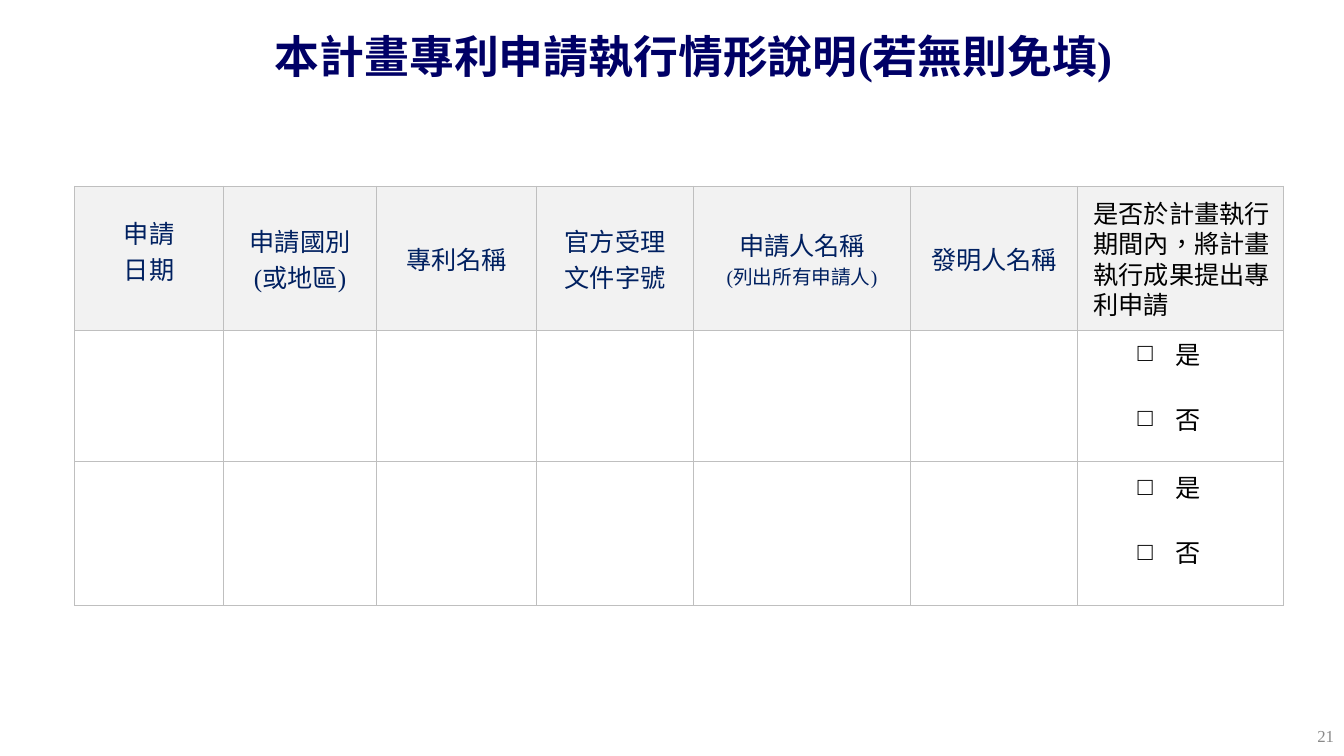
from dataclasses import dataclass

from lxml import etree
from pptx import Presentation
from pptx.dml.color import RGBColor
from pptx.enum.lang import MSO_LANGUAGE_ID
from pptx.enum.text import MSO_ANCHOR, PP_ALIGN
from pptx.oxml.ns import qn
from pptx.util import Pt

LEFT, MID, RIGHT = PP_ALIGN.LEFT, PP_ALIGN.CENTER, PP_ALIGN.RIGHT
TOP, CENTER = MSO_ANCHOR.TOP, MSO_ANCHOR.MIDDLE
CHINESE = MSO_LANGUAGE_ID.TRADITIONAL_CHINESE
FACE = "Times New Roman"
NAVY, BLACK, GRAY, RULE = "002060", "000000", "F2F2F2", "BFBFBF"
PITCH = 1.43  # line height of table text, as a share of its size


@dataclass
class Line:
    text: str
    size: float = 18


@dataclass
class Head:
    width: float
    lines: tuple[Line, ...] = ()
    anchor: MSO_ANCHOR = CENTER
    drop: float = 0


@dataclass
class Row:
    height: float
    lift: float


@dataclass
class Box:
    text: str
    left: float
    top: float
    width: float
    height: float
    size: float
    color: str
    align: PP_ALIGN
    anchor: MSO_ANCHOR = CENTER
    bold: bool = False
    pitch: float = 0


HEADS = [
    Head(106.5, (Line("申請"), Line("日期")), TOP, 20),
    Head(109.3, (Line("申請國別"), Line("(或地區)"))),
    Head(114.3, (Line("專利名稱"),)),
    Head(112.1, (Line("官方受理"), Line("文件字號"))),
    Head(155, (Line("申請人名稱"), Line("(列出所有申請人)", 14))),
    Head(119.3, (Line("發明人名稱"),)),
    Head(147.1),
]
HEAD_HIGH = 102.9
ROWS = [Row(93.6, 14), Row(102.7, 20)]
CHOICES = ("是", "否")
BOXES = [
    Box("21", 736, 511, 224, 29, 12, "898989", RIGHT),
    Box("本計畫專利申請執行情形說明(若無則免填)", 63.4, 11.5, 864, 57, 32,
        "000066", MID, bold=True),
    Box("是否於計畫執行期間內，將計畫執行成果提出專利申請", 774, 138.2,
        147.6, 94.3, 18, BLACK, LEFT, TOP, pitch=1.2),
]


def paint(code: str) -> RGBColor:
    return RGBColor.from_string(code)


def write(para, text: str, *, size: float = 18, color: str = BLACK,
          align: PP_ALIGN = MID, bold: bool = False, pitch: float = 0,
          gap: float = 0) -> None:
    para.alignment = align
    if pitch:
        para.line_spacing = Pt(round(size * pitch, 1))
    if gap:
        para.space_before = Pt(gap)
    run = para.add_run()
    run.text = text
    font = run.font
    font.name, font.size, font.bold = FACE, Pt(size), bold
    font.color.rgb = paint(color)
    font.language_id = CHINESE


def next_para(frame, index: int):
    return frame.add_paragraph() if index else frame.paragraphs[0]


def add_check(para) -> None:
    """Give a paragraph a hanging check box."""
    props = para._p.get_or_add_pPr()
    props.set("marL", "0")
    props.set("indent", str(-Pt(27)))
    etree.SubElement(props, qn("a:buFont")).set("typeface", FACE)
    etree.SubElement(props, qn("a:buChar")).set("char", "□")
    tabs = etree.SubElement(props, qn("a:tabLst"))
    tab = etree.SubElement(tabs, qn("a:tab"))
    tab.set("pos", str(Pt(18)))
    tab.set("algn", "l")


def add_rules(cell) -> None:
    """Draw the four borders of a cell."""
    props = cell._tc.get_or_add_tcPr()
    for index, side in enumerate(("lnL", "lnR", "lnT", "lnB")):
        rule = etree.Element(qn(f"a:{side}"), w=str(Pt(0.75)))
        fill = etree.SubElement(rule, qn("a:solidFill"))
        etree.SubElement(fill, qn("a:srgbClr")).set("val", RULE)
        props.insert(index, rule)


def style_cell(cell, head: bool) -> None:
    cell.margin_left = cell.margin_right = Pt(1.5)
    cell.margin_top = cell.margin_bottom = 0
    cell.vertical_anchor = CENTER
    if head:
        cell.fill.solid()
        cell.fill.fore_color.rgb = paint(GRAY)
    else:
        cell.fill.background()
    add_rules(cell)


def fill_head(cell, head: Head) -> None:
    cell.vertical_anchor = head.anchor
    cell.margin_top = Pt(head.drop)
    for index, line in enumerate(head.lines):
        write(next_para(cell.text_frame, index), line.text, size=line.size,
              color=NAVY, pitch=PITCH)


def fill_choice(cell, row: Row) -> None:
    cell.margin_bottom = Pt(row.lift)
    for index, text in enumerate(CHOICES):
        para = next_para(cell.text_frame, index)
        add_check(para)
        write(para, text, pitch=PITCH, gap=20.7 * index)


def add_grid(slide) -> None:
    highs = [HEAD_HIGH] + [row.height for row in ROWS]
    wide = sum(head.width for head in HEADS)
    table = slide.shapes.add_table(
        len(highs), len(HEADS), Pt(53.2), Pt(133.1), Pt(wide),
        Pt(sum(highs))).table
    table.first_row = table.horz_banding = False
    for column, head in zip(table.columns, HEADS):
        column.width = Pt(head.width)
    for index, high in enumerate(highs):
        table.rows[index].height = Pt(high)
        for cell in table.rows[index].cells:
            style_cell(cell, index == 0)
    for index, head in enumerate(HEADS):
        fill_head(table.cell(0, index), head)
    for index, row in enumerate(ROWS, 1):
        fill_choice(table.cell(index, len(HEADS) - 1), row)


def add_box(slide, box: Box) -> None:
    frame = slide.shapes.add_textbox(
        Pt(box.left), Pt(box.top), Pt(box.width), Pt(box.height)).text_frame
    frame.word_wrap = True
    frame.vertical_anchor = box.anchor
    write(frame.paragraphs[0], box.text, size=box.size, color=box.color,
          align=box.align, bold=box.bold, pitch=box.pitch)


def main() -> None:
    deck = Presentation()
    deck.slide_width, deck.slide_height = Pt(960), Pt(540)
    slide = deck.slides.add_slide(deck.slide_layouts[6])
    # Patent table
    add_grid(slide)
    # Page number, title and last column heading
    for box in BOXES:
        add_box(slide, box)
    deck.save("out.pptx")


if __name__ == "__main__":
    main()
